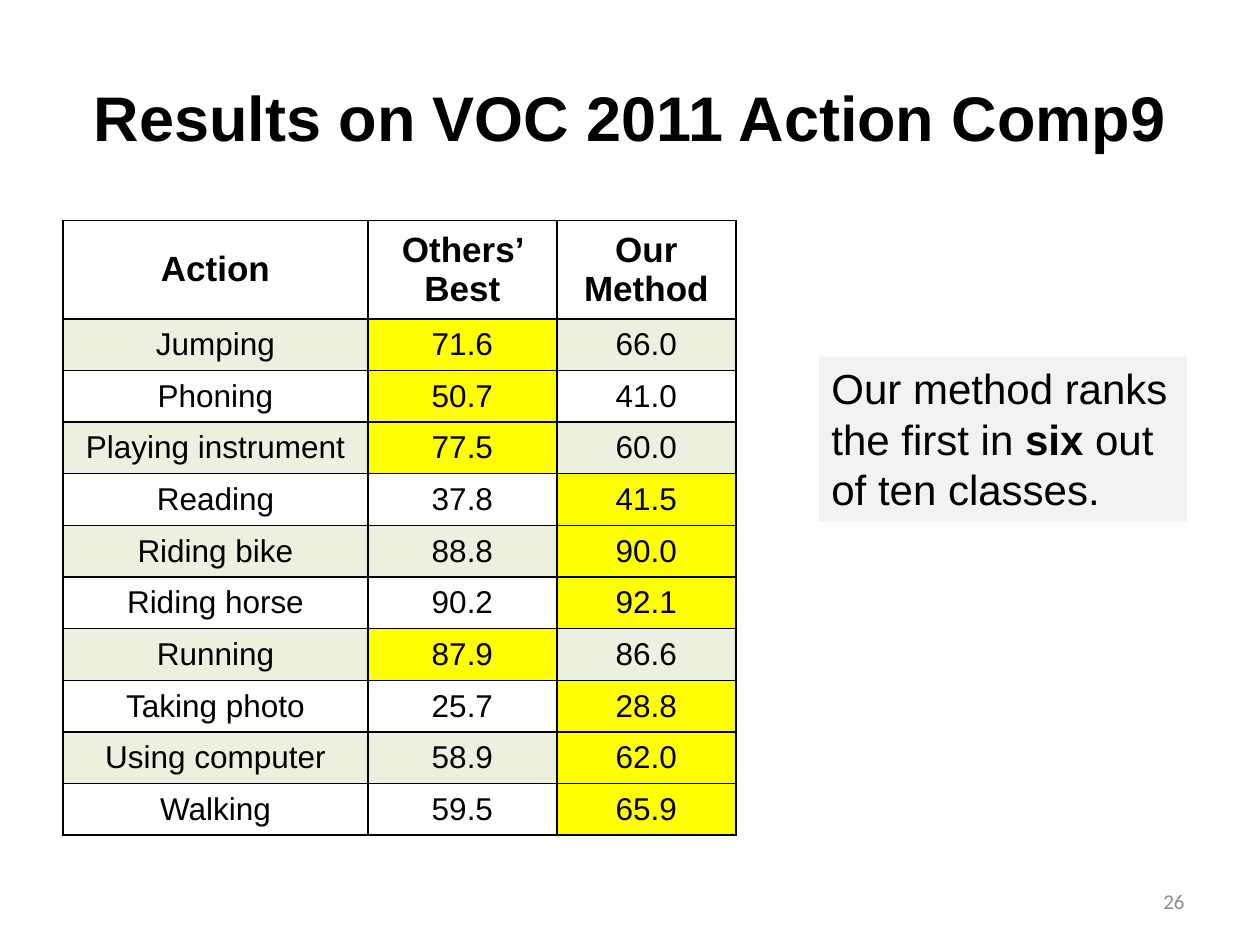
"""Build the slide with the VOC 2011 action classification results."""
from lxml import etree
from pptx import Presentation
from pptx.dml.color import RGBColor
from pptx.enum.shapes import MSO_SHAPE
from pptx.enum.text import MSO_ANCHOR, PP_ALIGN
from pptx.oxml.ns import qn
from pptx.util import Inches, Pt

RECTANGLE = MSO_SHAPE.RECTANGLE
TOP, MIDDLE = MSO_ANCHOR.TOP, MSO_ANCHOR.MIDDLE
LEFT, CENTER, RIGHT = PP_ALIGN.LEFT, PP_ALIGN.CENTER, PP_ALIGN.RIGHT

BLACK, GRAY, PALE_GRAY = "000000", "8C8C8C", "F2F2F2"
BAND, BEST = "EBF1DE", "FFFF00"

TITLE = "Results on VOC 2011 Action Comp9"
PAGE_NUMBER = "26"
HEADER = ("Action", "Others’ Best", "Our Method")
SCORES = [
    ("Jumping", 71.6, 66.0),
    ("Phoning", 50.7, 41.0),
    ("Playing instrument", 77.5, 60.0),
    ("Reading", 37.8, 41.5),
    ("Riding bike", 88.8, 90.0),
    ("Riding horse", 90.2, 92.1),
    ("Running", 87.9, 86.6),
    ("Taking photo", 25.7, 28.8),
    ("Using computer", 58.9, 62.0),
    ("Walking", 59.5, 65.9),
]
FINDING = [("Our method ranks the first in ", False), ("six", True), (" out of ten classes.", False)]

COLUMN_WIDTHS = (2.42, 1.5, 1.42)
HEADER_HEIGHT, SCORE_HEIGHT = 0.78, 0.41


def color(value):
    return RGBColor.from_string(value)


def write(frame, runs, size, align, ink=BLACK, font="Arial"):
    frame.word_wrap = True
    paragraph = frame.paragraphs[0]
    paragraph.alignment = align
    for text, bold in runs:
        run = paragraph.add_run()
        run.text = text
        run.font.name, run.font.size, run.font.bold = font, Pt(size), bold
        run.font.color.rgb = color(ink)


def add_label(slide, box, runs, size, align, **style):
    frame = slide.shapes.add_textbox(*map(Inches, box)).text_frame
    frame.vertical_anchor = MIDDLE
    write(frame, runs, size, align, **style)


def add_borders(cell):
    properties = cell._tc.get_or_add_tcPr()
    for position, side in enumerate(("a:lnL", "a:lnR", "a:lnT", "a:lnB")):
        line = etree.Element(qn(side), w=str(Pt(1)))
        fill = etree.SubElement(line, qn("a:solidFill"))
        etree.SubElement(fill, qn("a:srgbClr"), val=BLACK)
        properties.insert(position, line)


def fill_cell(cell, text, size, bold, fill):
    cell.vertical_anchor = MIDDLE
    write(cell.text_frame, [(text, bold)], size, CENTER)
    if fill:
        cell.fill.solid()
        cell.fill.fore_color.rgb = color(fill)
    else:
        cell.fill.background()
    add_borders(cell)


def add_scores(slide):
    heights = [HEADER_HEIGHT] + [SCORE_HEIGHT] * len(SCORES)
    size = (sum(COLUMN_WIDTHS), sum(heights))
    table = slide.shapes.add_table(
        len(heights), len(COLUMN_WIDTHS), *map(Inches, (0.5, 1.75, *size))
    ).table
    table.horz_banding = False
    for column, width in zip(table.columns, COLUMN_WIDTHS):
        column.width = Inches(width)
    for row, height in zip(table.rows, heights):
        row.height = Inches(height)
    for column, heading in enumerate(HEADER):
        fill_cell(table.cell(0, column), heading, 20, True, None)
    for row, (action, *scores) in enumerate(SCORES, 1):
        band = BAND if row % 2 else None
        fill_cell(table.cell(row, 0), action, 18, False, band)
        for column, score in enumerate(scores, 1):
            fill = BEST if score == max(scores) else band
            fill_cell(table.cell(row, column), f"{score:.1f}", 18, False, fill)


def add_finding(slide):
    finding = slide.shapes.add_shape(RECTANGLE, *map(Inches, (6.5, 2.83, 2.92, 1.31)))
    finding.shadow.inherit = False
    finding.fill.solid()
    finding.fill.fore_color.rgb = color(PALE_GRAY)
    finding.line.fill.background()
    finding.text_frame.vertical_anchor = TOP
    write(finding.text_frame, FINDING, 24, LEFT)


def main():
    deck = Presentation()
    deck.slide_width, deck.slide_height = Inches(10), Inches(7.5)
    slide = deck.slides.add_slide(deck.slide_layouts[6])
    add_label(slide, (0.5, 0.3, 9, 1.25), [(TITLE, True)], 36, CENTER)
    add_label(slide, (7.17, 6.95, 2.33, 0.4), [(PAGE_NUMBER, False)], 12, RIGHT,
              ink=GRAY, font="Calibri")
    add_scores(slide)
    add_finding(slide)
    deck.save("out.pptx")


if __name__ == "__main__":
    main()
